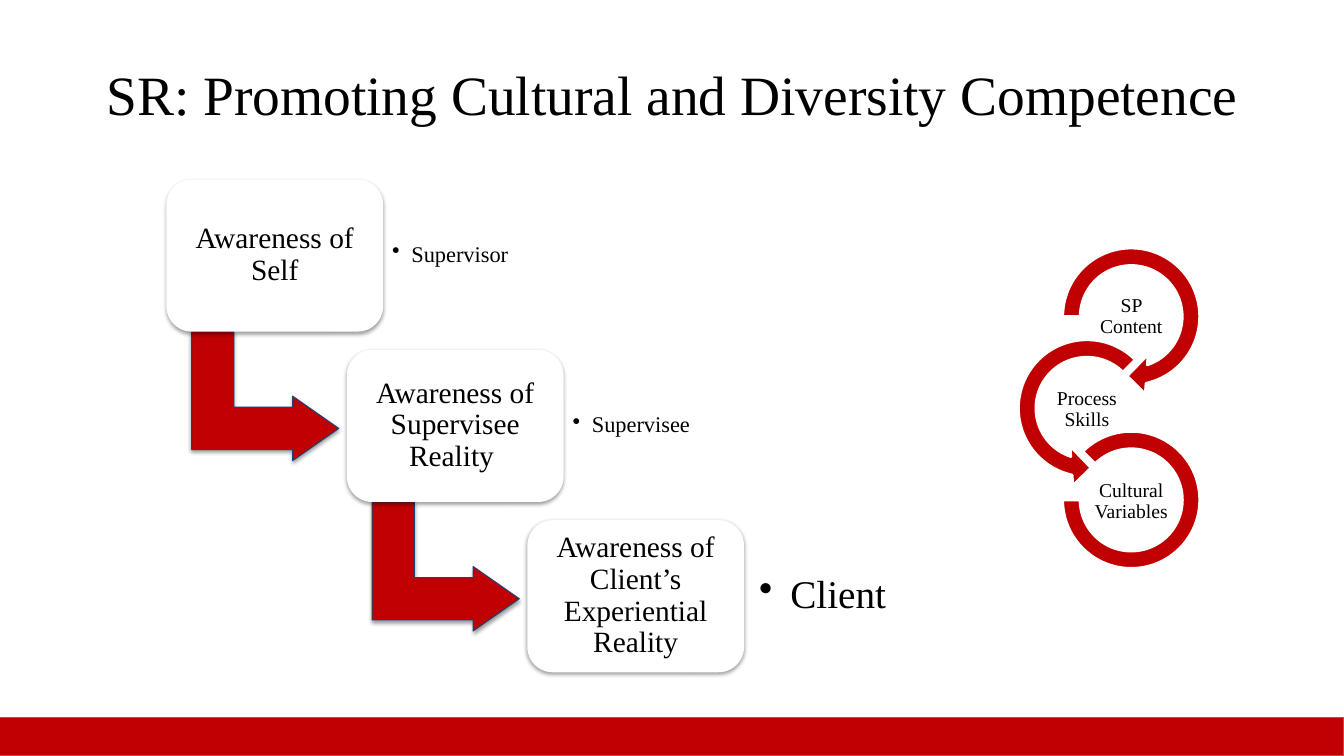
from dataclasses import dataclass
from lxml.etree import SubElement as Sub
from pptx import Presentation
from pptx.dml.color import RGBColor as Rgb
from pptx.enum.shapes import MSO_SHAPE as Kind
from pptx.enum.text import MSO_ANCHOR as Anchor, PP_ALIGN as Align
from pptx.oxml.ns import qn
from pptx.util import Inches, Pt

HUES = {"red": "C00000", "navy": "1C4271", "rust": "BF4C48",
        "white": "FFFFFF", "black": "000000"}


def hue(name):
    return Rgb.from_string(HUES[name])


def write(frame, text, size=14, font="Times New Roman", color="black",
          align=Align.CENTER, inset=None, lead=None, after=0, indent=None):
    frame.word_wrap = True
    frame.vertical_anchor = Anchor.MIDDLE
    if inset is not None:
        frame.margin_left = frame.margin_right = Inches(inset)
        frame.margin_top = frame.margin_bottom = Inches(inset)
    para = frame.paragraphs[0]
    para.text = text
    para.alignment = align
    if lead:
        para.line_spacing = lead
        para.space_after = Pt(size * after)
    if indent:
        para.level = 1
        props = para._p.get_or_add_pPr()
        props.set("marL", str(Inches(indent)))
        props.set("indent", str(-Inches(indent)))
        Sub(props, qn("a:buChar"), char="•")
    face = para.runs[0].font
    face.name, face.size = font, Pt(size)
    face.color.rgb = hue(color)


@dataclass
class Deck:
    """Hold the slide and draw each kind of element on it."""
    slide: object
    lead: float = 0.9

    def title(self, text, size, *area):
        head = self.slide.shapes.title
        head.left, head.top, head.width, head.height = map(Inches, area)
        write(head.text_frame, text, size=size)

    def shape(self, kind, *area, fill="red", line=None, width=0.75,
              adj=(), turn=0, shade=None):
        item = self.slide.shapes.add_shape(kind, *map(Inches, area))
        item.rotation = turn
        for i, value in enumerate(adj):
            item.adjustments[i] = value
        item.fill.solid()
        item.fill.fore_color.rgb = hue(fill)
        if line:
            item.line.color.rgb = hue(line)
            item.line.width = Pt(width)
        else:
            item.line.fill.background()
        item.shadow.inherit = False
        if shade:
            self.shadow(item, shade)

    def shadow(self, item, alpha):
        effects = item._element.spPr.find(qn("a:effectLst"))
        outer = Sub(effects, qn("a:outerShdw"), blurRad=str(Pt(3.1)),
                    dist=str(Pt(1.6)), dir="5400000", rotWithShape="0")
        color = Sub(outer, qn("a:srgbClr"), val=HUES["black"])
        Sub(color, qn("a:alpha"), val=str(alpha * 1000))

    def label(self, text, *area, **style):
        box = self.slide.shapes.add_textbox(*map(Inches, area))
        write(box.text_frame, text, lead=self.lead, **style)


def stairs(deck):
    steps = [("Awareness of Self", "Supervisor", 16, 0.09, 0.19),
             ("Awareness of Supervisee Reality ", "Supervisee", 16, 0.09, 0.19),
             ("Awareness of Client’s Experiential Reality", "Client", 28, 0.15, 0.31)]
    for i, (text, who, size, inset, indent) in enumerate(steps):
        x, y = 1.65 + 1.79 * i, 1.78 + 1.69 * i
        if i < len(steps) - 1:
            deck.shape(Kind.BENT_UP_ARROW, x + 0.34, y + 1.42, 1.28, 1.46,
                       line="navy", adj=(0.328, 0.25, 0.358), turn=90, shade=38)
        deck.shape(Kind.ROUNDED_RECTANGLE, x, y, 2.15, 1.51, fill="white",
                   adj=(0.167,), shade=38)
        deck.label(text, x + 0.07, y + 0.07, 2.01, 1.36, size=21,
                   inset=0.09, after=0.35)
        deck.label(who, x + 2.15, y + 0.14, 1.57, 1.22, size=size,
                   align=Align.LEFT, inset=inset, after=0.15, indent=indent)


def rings(deck):
    parts = [("SP Content", Kind.CIRCULAR_ARROW, 10.43, 2.35, 1.58,
              (0.11, 11.423, 45, 108, 0.125)),
             ("Process Skills", Kind.LEFT_CIRCULAR_ARROW, 9.99, 3.26, 1.58,
              (0.11, 11.423, 63, 189, 0.125)),
             ("Cultural Variables", Kind.BLOCK_ARC, 10.54, 4.28, 1.36,
              (135, 108, 0.127))]
    for i, (text, kind, x, y, size, adj) in enumerate(parts):
        deck.shape(kind, x, y, size, size, line="white", width=2, adj=adj)
        deck.label(text, x + size / 2 - 0.44, 2.92 + 0.92 * i, 0.88, 0.44,
                   inset=0.01, after=0.35)


def main():
    show = Presentation()
    show.slide_width, show.slide_height = Inches(13.33), Inches(7.5)
    deck = Deck(show.slides.add_slide(show.slide_layouts[5]))
    deck.title("SR: Promoting Cultural and Diversity Competence", 39.6,
               0.67, 0.3, 12, 1.25)
    stairs(deck)
    deck.shape(Kind.RECTANGLE, 0, 7.12, 13.33, 0.38, line="rust", shade=35)
    rings(deck)
    show.save("out.pptx")


if __name__ == "__main__":
    main()
